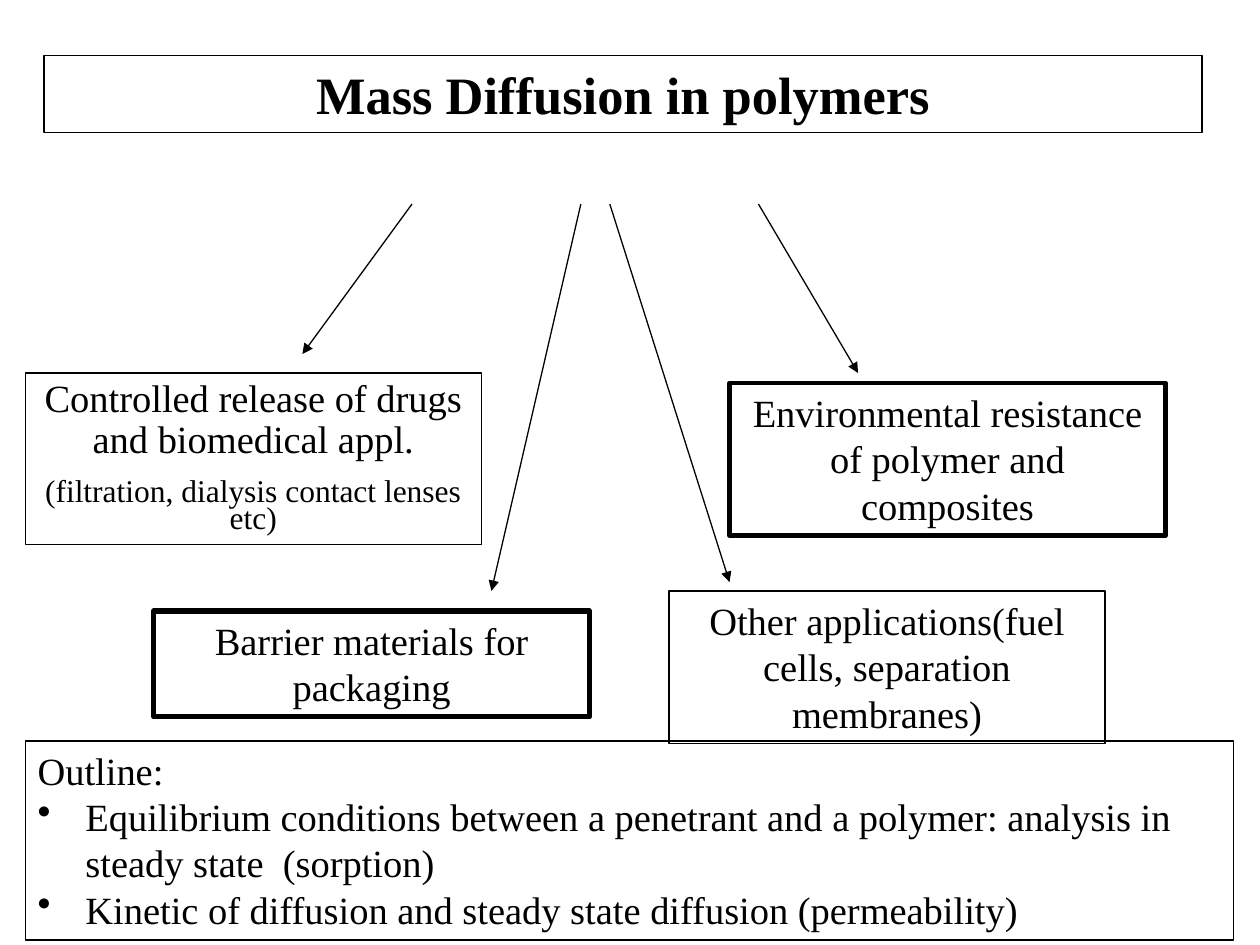
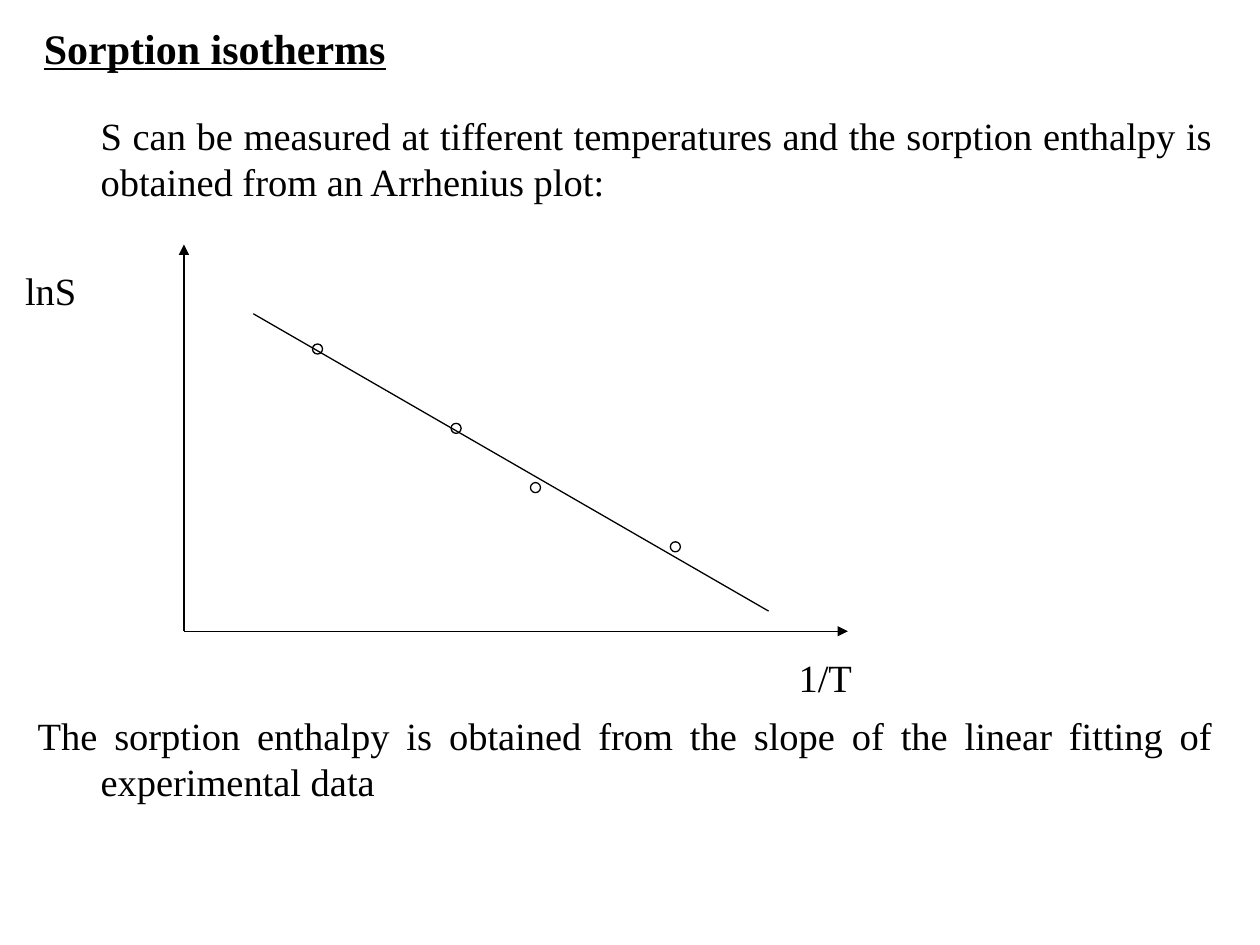
from pptx import Presentation
from pptx.dml.color import RGBColor
from pptx.enum.shapes import MSO_CONNECTOR, MSO_SHAPE
from pptx.enum.text import MSO_ANCHOR, MSO_AUTO_SIZE, PP_ALIGN
from pptx.oxml.ns import qn
from pptx.util import Inches, Pt
from lxml import etree

STRAIGHT = MSO_CONNECTOR.STRAIGHT
RECTANGLE, ELLIPSE = MSO_SHAPE.RECTANGLE, MSO_SHAPE.OVAL
TOP, FIT = MSO_ANCHOR.TOP, MSO_AUTO_SIZE.SHAPE_TO_FIT_TEXT
CENTER, JUSTIFY = PP_ALIGN.CENTER, PP_ALIGN.JUSTIFY

WIDTH, HEIGHT = Inches(10), Inches(7.5)
COLUMNS, ROWS = 100, 75
INK, PAPER = "000000", "FFFFFF"
BODY_FONT = {"name": "Times New Roman", "size": Pt(22), "bold": False}
THIN, BOLD_FRAME, HEAVY_FRAME = 0.75, 2.75, 3
CENTERED = {"alignment": CENTER}
JUSTIFIED = {"alignment": JUSTIFY}
PLOT_GAP = Pt(290)
MARKER = 0.8


def color(hex_value):
    """Turn a hex string into a colour."""
    return RGBColor.from_string(hex_value)


def grid(x, y):
    """Convert a grid column and row into slide lengths."""
    return round(WIDTH * x / COLUMNS), round(HEIGHT * y / ROWS)


def apply(target, formats):
    """Set every format value on the target."""
    for name, value in formats.items():
        setattr(target, name, value)


def para(text, layout=None, font=None, indent=None, bullet=None):
    """Describe one paragraph."""
    return {"text": text, "layout": layout or {}, "font": font or {},
            "indent": indent, "bullet": bullet}


def write(frame, paragraphs, wrap=True):
    """Fill a text frame with the described paragraphs."""
    apply(frame, {"word_wrap": wrap, "auto_size": FIT, "vertical_anchor": TOP})
    for index, item in enumerate(paragraphs):
        line = frame.add_paragraph() if index else frame.paragraphs[0]
        apply(line, {"alignment": PP_ALIGN.LEFT, **item["layout"]})
        run = line.add_run()
        run.text = item["text"]
        apply(run.font, {**BODY_FONT, **item["font"]})
        run.font.color.rgb = color(INK)
        properties = line._p.get_or_add_pPr()
        if item["indent"]:
            margin, first = item["indent"]
            properties.set("marL", str(Inches(margin)))
            properties.set("indent", str(Inches(first)))
        if item["bullet"]:
            etree.SubElement(properties, qn("a:buChar")).set("char", item["bullet"])


def outlined(slide, kind, place, weight=THIN):
    """Add an unfilled shape with a black outline."""
    x, y, w, h = place
    shape = slide.shapes.add_shape(kind, *grid(x, y), *grid(w, h))
    shape.shadow.inherit = False
    shape.fill.background()
    shape.line.color.rgb = color(INK)
    shape.line.width = Pt(weight)
    return shape


def framed_text(slide, place, paragraphs, weight=THIN):
    """Add a framed block of text."""
    write(outlined(slide, RECTANGLE, place, weight).text_frame, paragraphs)


def plain_text(slide, place, paragraphs, wrap=False):
    """Add a block of text without a frame."""
    x, y, w, h = place
    label = slide.shapes.add_textbox(*grid(x, y), *grid(w, h))
    write(label.text_frame, paragraphs, wrap)


def marker(slide, x, y):
    """Add a data point centred on a grid position."""
    point = outlined(slide, ELLIPSE, (x - MARKER / 2, y - MARKER / 2, MARKER, MARKER))
    point.fill.solid()
    point.fill.fore_color.rgb = color(PAPER)


def stroke(slide, start, end, arrow=True):
    """Draw a thin line, with an arrowhead at its end if wanted."""
    line = slide.shapes.add_connector(STRAIGHT, *grid(*start), *grid(*end))
    line.line.color.rgb = color(INK)
    line.line.width = Pt(THIN)
    if arrow:
        etree.SubElement(line.line._get_or_add_ln(), qn("a:tailEnd")).set("type", "triangle")
    etree.SubElement(line._element.spPr, qn("a:effectLst"))


def diffusion_slide(slide):
    """Build the overview of applications and the outline."""
    framed_text(slide, (3.5, 4.4, 91.9, 6.1), [
        para("Mass Diffusion in polymers", CENTERED, {"size": Pt(30), "bold": True})])
    framed_text(slide, (2, 29.6, 36.2, 13.6), [
        para("Controlled release of drugs and biomedical appl.",
             {**CENTERED, "line_spacing": 0.9}),
        para("(filtration, dialysis contact lenses etc)",
             {**CENTERED, "line_spacing": 0.7, "space_before": Pt(11)},
             {"size": Pt(18)})])
    applications = [
        ("Environmental resistance of polymer and composites", 57.9, 30.4, 12.1, BOLD_FRAME),
        ("Barrier materials for packaging", 12.2, 48.5, 8.4, HEAVY_FRAME),
        ("Other applications(fuel cells, separation membranes)", 53.1, 46.9, 12.1, THIN),
    ]
    for text, x, y, height, weight in applications:
        framed_text(slide, (x, y, 34.6, height), [para(text, CENTERED)], weight)
    branches = [(32.7, (24, 28.1)), (46.1, (39, 46.9)),
                (48.4, (57.9, 46.2)), (60.2, (68.1, 29.6))]
    for start_x, end in branches:
        stroke(slide, (start_x, 16.2), end)
    topics = [
        "Equilibrium conditions between a penetrant and a polymer: "
        "analysis in steady state  (sorption)",
        "Kinetic of diffusion and steady state diffusion (permeability)",
    ]
    framed_text(slide, (2, 58.8, 95.9, 15.8), [para("Outline:")] + [
        para(topic, indent=(0.38, -0.38), bullet="•") for topic in topics])


def sorption_slide(slide):
    """Build the Arrhenius plot and its explanation."""
    plain_text(slide, (2, 8.4, 95.2, 64), [
        para("S can be measured at tifferent temperatures and the sorption "
             "enthalpy is obtained from an Arrhenius plot:",
             JUSTIFIED, indent=(0.5, 0)),
        para("The sorption enthalpy is obtained from the slope of the linear "
             "fitting of experimental data",
             {**JUSTIFIED, "space_before": PLOT_GAP}, indent=(0.5, -0.5))], wrap=True)
    origin = (14.6, 50.1)
    for axis_end in ((14.6, 19.4), (67.3, 50.1)):
        stroke(slide, origin, axis_end)
    plain_text(slide, (1, 20.7, 6.1, 4.7), [para("lnS")])
    plain_text(slide, (62.4, 51.4, 6.3, 4.7), [para("1/T")])
    for x, y in ((25.2, 27.7), (36.2, 34), (42.5, 38.7), (53.6, 43.4)):
        marker(slide, x, y)
    stroke(slide, (20.1, 24.9), (61, 48.5), arrow=False)
    plain_text(slide, (2.5, 1.3, 29.4, 5), [
        para("Sorption isotherms",
             font={"size": Pt(24), "bold": True, "underline": True})])


def main():
    """Build and save the presentation."""
    deck = Presentation()
    apply(deck, {"slide_width": WIDTH, "slide_height": HEIGHT})
    for build in (diffusion_slide, sorption_slide):
        build(deck.slides.add_slide(deck.slide_layouts[6]))
    deck.save("out.pptx")


if __name__ == "__main__":
    main()
